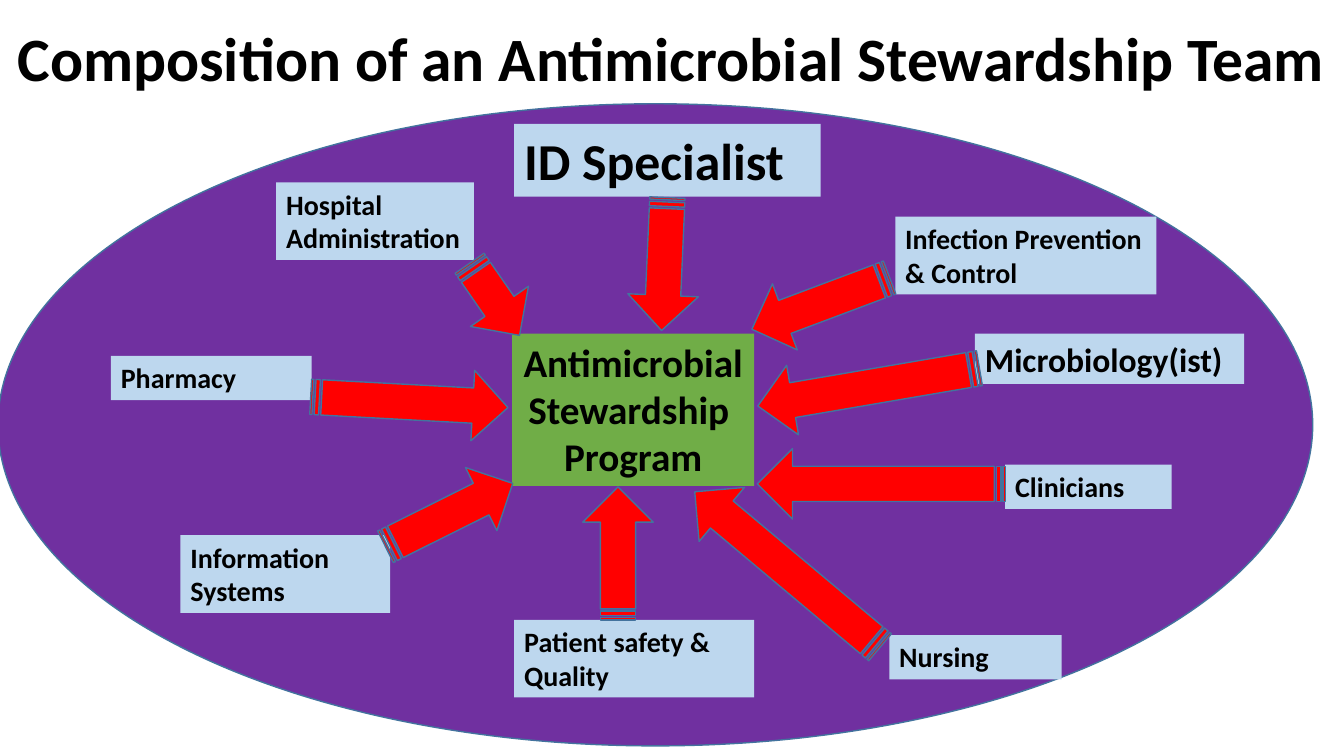
from pptx import Presentation
from pptx import util as u
from pptx.dml.color import RGBColor
from pptx.enum import shapes, text

PX = 9144
SLIDE_SIZE = (1333, 750)

COLORS = {
    "text": "000000",
    "ellipse": "7030A0",
    "label": "BDD7EE",
    "program": "70AD47",
    "arrow": "FF0000",
    "outline": "43739E",
}

MEMBERS = [
    ("ID Specialist", (510, 123, 304, 72), 37),
    ("Hospital Administration", (274, 181, 196, 77), 20),
    ("Pharmacy", (110, 353, 199, 44), 20),
    ("Information Systems", (179, 531, 208, 77), 20),
    ("Patient safety & Quality", (510, 615, 238, 77), 20),
    ("Nursing", (882, 630, 171, 44), 20),
    ("Clinicians", (997, 461, 165, 44), 20),
    ("Infection Prevention & Control", (888, 215, 259, 77), 20),
    ("Microbiology(ist)", (967, 331, 267, 50), 24),
]

ARROW_HEIGHT = 70
ARROWS = [
    (447, 262, 87, 55.3),
    (593, 227, 132, 92.5),
    (741, 266, 146, 159.4),
    (751, 445, 246, 180),
    (308, 364, 196, 3.1),
    (375, 476, 141, 333.5),
    (547, 514, 132, 270),
    (661, 530, 240, 220),
]
MICROBIOLOGY_ARROW = (750, 349, 223, 170.3)


class TeamSlide:
    font = {"name": "Calibri", "bold": True}

    def __init__(self, presentation):
        self.slide = presentation.slides.add_slide(presentation.slide_layouts[5])
        self.canvas = self.slide.shapes

    def open_group(self):
        self.canvas = self.slide.shapes.add_group_shape().shapes

    def close_group(self):
        self.canvas = self.slide.shapes

    def set_text(self, shape, words, size, align):
        frame = shape.text_frame
        frame.text = words
        frame_format = {
            "word_wrap": True,
            "auto_size": text.MSO_AUTO_SIZE.NONE,
            "vertical_anchor": text.MSO_ANCHOR.TOP,
        }
        for name, value in frame_format.items():
            setattr(frame, name, value)
        for paragraph in frame.paragraphs:
            paragraph.alignment = align
            paragraph.line_spacing = 1.0
            font = paragraph.runs[0].font
            for name, value in {**self.font, "size": u.Pt(size)}.items():
                setattr(font, name, value)
            font.color.rgb = RGBColor.from_string(COLORS["text"])

    def title(self, words, box, size):
        shape = self.slide.shapes.title
        for name, value in zip(("left", "top", "width", "height"), box):
            setattr(shape, name, value * PX)
        self.set_text(shape, words, size, text.PP_ALIGN.CENTER)

    def shape(self, kind, box, fill, outline=None):
        shape = self.canvas.add_shape(kind, *(value * PX for value in box))
        shape.shadow.inherit = False
        shape.fill.solid()
        shape.fill.fore_color.rgb = RGBColor.from_string(COLORS[fill])
        if outline:
            shape.line.color.rgb = RGBColor.from_string(COLORS[outline])
            shape.line.width = u.Pt(1)
        else:
            shape.line.fill.background()
        return shape

    def ellipse(self, box):
        self.shape(shapes.MSO_SHAPE.OVAL, box, "ellipse", "outline")

    def label(self, words, box, size, fill="label", align=text.PP_ALIGN.LEFT):
        shape = self.shape(shapes.MSO_SHAPE.RECTANGLE, box, fill)
        self.set_text(shape, words, size, align)

    def arrow(self, left, top, width, angle):
        box = (left, top, width, ARROW_HEIGHT)
        kind = shapes.MSO_SHAPE.STRIPED_RIGHT_ARROW
        self.shape(kind, box, "arrow", "outline").rotation = angle


def main():
    presentation = Presentation()
    presentation.slide_width, presentation.slide_height = (
        value * PX for value in SLIDE_SIZE
    )
    team = TeamSlide(presentation)
    team.title(
        "Composition of an Antimicrobial Stewardship Team", (0, 15, 1333, 84), 44
    )
    team.open_group()
    team.ellipse((-2, 103, 1304, 637))
    for member in MEMBERS:
        team.label(*member)
    team.label(
        "Antimicrobial \nStewardship \nProgram",
        (508, 331, 240, 151),
        28,
        "program",
        text.PP_ALIGN.CENTER,
    )
    for arrow in ARROWS:
        team.arrow(*arrow)
    team.close_group()
    team.arrow(*MICROBIOLOGY_ARROW)
    presentation.save("out.pptx")


if __name__ == "__main__":
    main()
